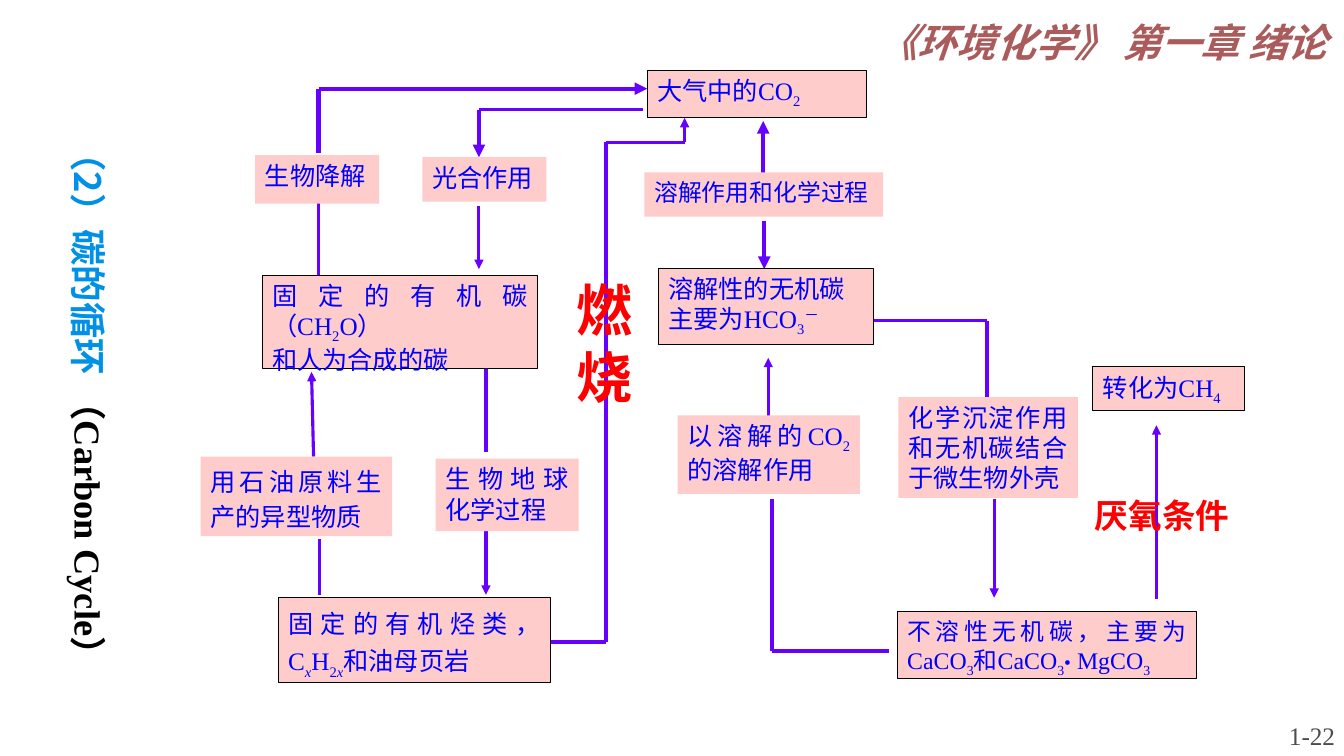
from itertools import pairwise

from lxml.etree import SubElement
from pptx import Presentation
from pptx.dml.color import RGBColor
from pptx.enum.shapes import MSO_CONNECTOR, MSO_SHAPE
from pptx.enum.text import MSO_ANCHOR, MSO_AUTO_SIZE, PP_ALIGN
from pptx.oxml.ns import qn
from pptx.util import Inches, Pt

COLORS = {
    "arrow": "6600FF", "box": "FFCCCC", "text": "0000FF", "border": "000000",
    "red": "FF0000", "header": "AA5C5C", "title": "0090E6", "number": "4D4D4D",
}
LATIN = "Times New Roman"
CHINESE = "Noto Sans CJK SC"
MARKS = {"_": (-25000, False), "^": (30000, False), "*": (-25000, True)}


def color(name):
    return RGBColor.from_string(COLORS[name])


def write_run(paragraph, text, size=18, color_name="text", bold=False, italic=False,
              latin=LATIN, chinese=CHINESE, baseline=0):
    run = paragraph.add_run()
    run.text = text
    run.font.size = Pt(size)
    run.font.bold = bold
    run.font.italic = italic
    run.font.name = latin
    run.font.color.rgb = color(color_name)
    properties = run.font._element
    SubElement(properties, qn("a:ea")).set("typeface", chinese)
    if baseline:
        properties.set("baseline", str(baseline))


def write_formula(paragraph, formula, size):
    for part in formula.split("|"):
        baseline, italic = MARKS.get(part[0], (0, False))
        text = part[1:] if part[0] in MARKS else part
        write_run(paragraph, text, size=14 if text == "•" else size,
                  baseline=baseline, italic=italic)


def add_label(slide, box, text, align=PP_ALIGN.LEFT, anchor=MSO_ANCHOR.TOP, **text_format):
    shape = slide.shapes.add_textbox(*map(Inches, box))
    frame = shape.text_frame
    frame.word_wrap = True
    frame.vertical_anchor = anchor
    paragraph = frame.paragraphs[0]
    paragraph.alignment = align
    write_run(paragraph, text, **text_format)


def add_box(slide, origin, place, lines, border=False, size=18, spacing=1.0):
    left, top, width, height = place
    shape = slide.shapes.add_shape(
        MSO_SHAPE.RECTANGLE, Inches(origin[0] + left), Inches(origin[1] + top),
        Inches(width), Inches(height))
    shape.shadow.inherit = False
    shape.fill.solid()
    shape.fill.fore_color.rgb = color("box")
    if border:
        shape.line.color.rgb = color("border")
        shape.line.width = Pt(0.75)
    else:
        shape.line.fill.background()
    frame = shape.text_frame
    frame.word_wrap = True
    frame.vertical_anchor = MSO_ANCHOR.TOP
    for index, formula in enumerate(lines):
        paragraph = frame.add_paragraph() if index else frame.paragraphs[0]
        paragraph.alignment = PP_ALIGN.JUSTIFY
        paragraph.line_spacing = spacing
        write_formula(paragraph, formula, size)


def add_path(slide, origin, points, width=2.25, arrow=True):
    corners = [(Inches(origin[0] + x), Inches(origin[1] + y)) for x, y in points]
    for start, end in pairwise(corners):
        connector = slide.shapes.add_connector(MSO_CONNECTOR.STRAIGHT, *start, *end)
        connector.line.color.rgb = color("arrow")
        connector.line.width = Pt(width)
        if arrow and end == corners[-1]:
            SubElement(connector.line._get_or_add_ln(), qn("a:tailEnd")).set("type", "triangle")
        SubElement(connector._element.spPr, qn("a:effectLst"))


def draw_header(slide, box):
    add_label(slide, box, "《环境化学》 第一章 绪论", align=PP_ALIGN.RIGHT, size=28,
              color_name="header", bold=True, italic=True,
              latin="Noto Sans CJK JP", chinese="Noto Sans CJK JP")


def draw_title(slide, box):
    title = slide.shapes.title
    title.left, title.top, title.width, title.height = map(Inches, box)
    title.rotation = 90
    frame = title.text_frame
    frame.word_wrap = True
    frame.auto_size = MSO_AUTO_SIZE.SHAPE_TO_FIT_TEXT
    frame.vertical_anchor = MSO_ANCHOR.TOP
    paragraph = frame.paragraphs[0]
    paragraph.alignment = PP_ALIGN.LEFT
    paragraph._p.get_or_add_pPr().set("indent", str(Inches(0.09)))
    write_run(paragraph, "（2）碳的循环", size=26, color_name="title", bold=True, latin=CHINESE)
    write_run(paragraph, " ", size=28, color_name="title", bold=True)
    write_run(paragraph, "（Carbon Cycle）", size=26, color_name="border", bold=True)


def draw_organic_cycle(slide, box):
    origin = box[:2]
    paths = [
        ([(1.16, 0.82), (1.16, 0.18), (4.42, 0.18)], 3, True),
        ([(1.16, 1.31), (1.16, 2.12)], 2.25, False),
        ([(4.38, 0.39), (2.75, 0.39)], 2.25, False),
        ([(2.75, 0.39), (2.75, 0.86)], 3, True),
        ([(2.75, 1.34), (2.75, 1.97)], 2.25, True),
        ([(1.17, 5.2), (1.17, 4.65)], 2.25, False),
        ([(1.11, 3.83), (1.09, 2.99)], 2.25, True),
        ([(2.82, 2.91), (2.82, 3.78)], 2.25, False),
        ([(2.82, 4.57), (2.82, 5.2)], 2.25, True),
        ([(3.45, 5.67), (4.01, 5.67), (4.01, 0.71), (4.79, 0.71), (4.79, 0.47)], 2.25, True),
    ]
    for points, width, arrow in paths:
        add_path(slide, origin, points, width, arrow)
    add_box(slide, origin, (0.53, 0.84, 1.23, 0.48), ["生物降解"])
    add_box(slide, origin, (2.19, 0.86, 1.23, 0.44), ["光合作用"])
    add_box(slide, origin, (0.6, 2.03, 2.73, 0.93),
            ["固定的有机碳（CH|_2|O）", "和人为合成的碳"], border=True)
    add_box(slide, origin, (-0.01, 3.83, 1.9, 0.79), ["用石油原料生产的异型物质"], spacing=1.15)
    add_box(slide, origin, (2.32, 3.85, 1.42, 0.72), ["生物地球化学过程"])
    add_box(slide, origin, (0.76, 5.23, 2.7, 0.84),
            ["固定的有机烃类，C|*x|H|_2|*x|和油母页岩"], border=True, spacing=1.2)
    add_label(slide, (origin[0] + 3.62, origin[1] + 1.98, 0.55, 1.45), "燃烧",
              size=40, color_name="red", bold=True)


def draw_inorganic_cycle(slide, box):
    origin = box[:2]
    paths = [
        ([(1.17, 1.05), (1.17, 0.5)], 3, True),
        ([(1.18, 1.49), (1.18, 1.97)], 3, True),
        ([(1.22, 3.52), (1.22, 2.85)], 2.25, True),
        ([(2.26, 2.48), (3.39, 2.48), (3.39, 3.34)], 2.25, True),
        ([(3.46, 4.25), (3.46, 5.23)], 2.25, True),
        ([(2.42, 5.76), (1.26, 5.76), (1.26, 4.25)], 3, False),
        ([(5.07, 5.24), (5.07, 3.52)], 2.25, True),
    ]
    for points, width, arrow in paths:
        add_path(slide, origin, points, width, arrow)
    add_box(slide, origin, (0.02, 0, 2.17, 0.47), ["大气中的CO|_2"], border=True)
    add_box(slide, origin, (-0.01, 1.01, 2.37, 0.44), ["溶解作用和化学过程"], size=17)
    add_box(slide, origin, (0.13, 1.96, 2.13, 0.76),
            ["溶解性的无机碳", "主要为HCO|_3|^－"], border=True)
    add_box(slide, origin, (0.32, 3.42, 1.81, 0.78), ["以溶解的CO|_2|的溶解作用"])
    add_box(slide, origin, (2.51, 3.24, 1.78, 1), ["化学沉淀作用和无机碳结合于微生物外壳"])
    add_box(slide, origin, (2.5, 5.37, 2.97, 0.66),
            ["不溶性无机碳，主要为CaCO|_3|和CaCO|_3|•| MgCO|_3"], border=True, size=17)
    add_box(slide, origin, (4.44, 2.94, 1.5, 0.43), ["转化为CH|_4"], border=True)
    add_label(slide, (origin[0] + 4.36, origin[1] + 4.16, 1.89, 0.46), "厌氧条件",
              align=PP_ALIGN.JUSTIFY, size=24, color_name="red", bold=True)


def draw_slide_number(slide, box):
    add_label(slide, box, "1-22", align=PP_ALIGN.RIGHT, anchor=MSO_ANCHOR.BOTTOM,
              color_name="number")


def main():
    presentation = Presentation()
    presentation.slide_width = Inches(13.33)
    presentation.slide_height = Inches(7.5)
    slide = presentation.slides.add_slide(presentation.slide_layouts[5])
    draw_slide_number(slide, (11.25, 6.98, 2.09, 0.52))
    draw_header(slide, (7.51, 0.13, 5.75, 0.57))
    draw_title(slide, (-2.02, 3.78, 5.83, 0.57))
    draw_organic_cycle(slide, (2, 0.7, 4.8, 6.1))
    draw_inorganic_cycle(slide, (6.4, 0.7, 6.3, 6.1))
    presentation.save("out.pptx")


if __name__ == "__main__":
    main()
